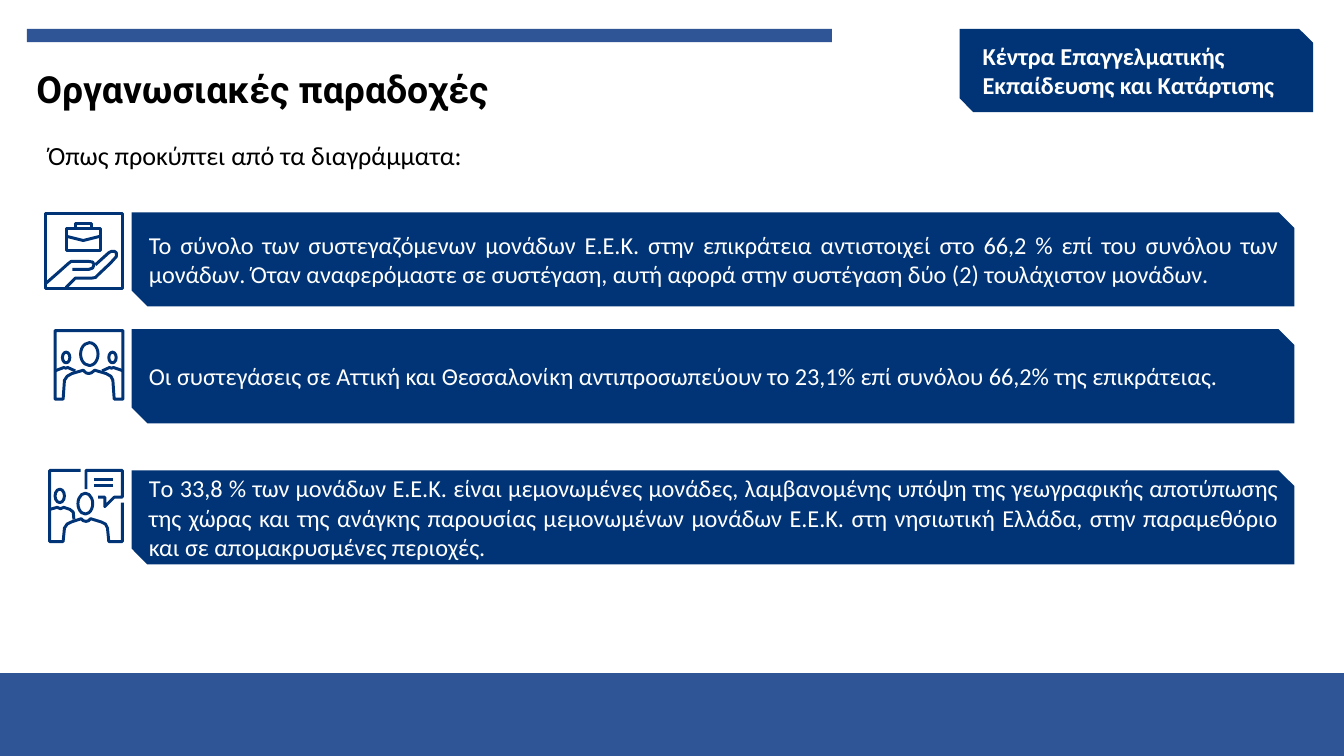
"""Builds the slide on organisational assumptions, on a grid of 100 columns."""
import pptx
import pptx.util
import pptx.dml.color
import pptx.enum.shapes
import pptx.enum.text

THEME = {
    "navy": "013476", "blue": "2F5597", "white": "FFFFFF", "black": "000000",
    "head": "Roboto", "body": "Calibri",
    "title": 20, "lead": 14, "text": 13, "line": 1.6,
}
WIDE = 10
HIGH = WIDE * 9 / 16
COL = WIDE / 100
DOT = COL / 10

TITLE = "Οργανωσιακές παραδοχές"
LEAD = "Όπως προκύπτει από τα διαγράμματα:"
BADGE = "Κέντρα Επαγγελματικής Εκπαίδευσης και Κατάρτισης"

HAND = {
    "ovals": [],
    "paths": [
        [(1, 1), (58, 1), (58, 56.5), (1, 56.5), (1, 1)],
        [(16.5, 12), (41.5, 12), (41.5, 28.5), (16.5, 28.5), (16.5, 12)],
        [(23, 12), (23, 8), (35, 8), (35, 12)],
        [(17, 18), (29, 21), (41, 18)],
        [(1, 53), (9, 46), (18, 38), (20, 36.5), (33, 36.5), (36, 37),
         (37, 39), (36, 41.5), (33, 42.5), (21, 42.5)],
        [(38, 39), (48, 30), (50, 29), (52, 29), (53.5, 30), (53.5, 33),
         (49, 38), (40, 46.5), (38, 48.5), (35, 49), (23, 49), (16, 56)],
    ],
}
CROWD = {
    "ovals": [(27, 10, 13, 17), (13.5, 17, 5.5, 8), (48, 17, 5.5, 8)],
    "paths": [
        [(14, 52), (8, 52), (8, 1), (58.5, 1), (58.5, 52), (52, 52),
         (51, 38), (49.5, 35), (46, 33), (37.5, 30.5), (35, 32.5), (33, 33),
         (31, 32.5), (29, 30.5), (20.5, 33), (17, 35), (15, 38), (14, 52)],
        [(8, 31), (10.5, 30), (14.5, 28.5), (16, 29), (17.5, 28.5), (23, 31)],
        [(43, 31), (48.5, 28.5), (50, 29), (51.5, 28.5), (56, 30), (58.5, 31)],
    ],
}
TALK = {
    "ovals": [(25, 18, 11, 15.5), (8, 15, 7, 10)],
    "paths": [
        [(27, 1), (4, 1), (4, 54), (14, 54), (15, 44), (17, 41), (20, 39.5),
         (27.5, 37), (29, 38.5), (31, 39), (33, 38.5), (34.5, 37),
         (42.5, 39.5), (45.5, 41), (47, 44), (48, 54), (58, 54), (58, 25)],
        [(4, 30), (9.5, 28.5), (12, 29.5), (14.5, 28.5), (19, 30),
         (21.5, 32), (22, 37.5)],
        [(31, 15), (31, 1), (58, 1), (58, 21), (52, 21), (45, 28),
         (45, 21), (40, 21)],
        [(37, 8), (51, 8)],
        [(37, 12), (51, 12)],
    ],
}
ROWS = [
    (15.8, 15.8, HAND, "Το σύνολο των συστεγαζόμενων μονάδων Ε.Ε.Κ. στην "
     "επικράτεια αντιστοιχεί στο 66,2 % επί του συνόλου των μονάδων. Όταν "
     "αναφερόμαστε σε συστέγαση, αυτή αφορά στην συστέγαση δύο (2) "
     "τουλάχιστον μονάδων."),
    (24.5, 24.5, CROWD, "Οι συστεγάσεις σε Αττική και Θεσσαλονίκη "
     "αντιπροσωπεύουν το 23,1% επί συνόλου 66,2% της επικράτειας."),
    (35, 34.9, TALK, "Τo 33,8 % των μονάδων Ε.Ε.Κ. είναι μεμονωμένες μονάδες, "
     "λαμβανομένης υπόψη της γεωγραφικής αποτύπωσης της χώρας και της ανάγκης "
     "παρουσίας μεμονωμένων μονάδων Ε.Ε.Κ. στη νησιωτική Ελλάδα, στην "
     "παραμεθόριο και σε απομακρυσμένες περιοχές."),
]

KIND = pptx.enum.shapes.MSO_SHAPE
ALIGN = pptx.enum.text.PP_ALIGN
MID = pptx.enum.text.MSO_ANCHOR.MIDDLE
TOP = pptx.enum.text.MSO_ANCHOR.TOP


def tone(name):
    return pptx.dml.color.RGBColor.from_string(THEME[name])


def grid(box):
    return [pptx.util.Inches(n * COL) for n in box]


def block(deck, kind, box, fill):
    shape = deck.add_shape(kind, *grid(box))
    shape.shadow.inherit = False
    shape.fill.solid()
    shape.fill.fore_color.rgb = tone(fill)
    shape.line.fill.background()
    return shape


def write(shape, text, size, ink, pad, face="body", bold=False,
          align=ALIGN.LEFT, anchor=TOP, space=1.0):
    frame = shape.text_frame
    frame.word_wrap = True
    frame.vertical_anchor = anchor
    side, edge = [pptx.util.Inches(n) for n in pad]
    frame.margin_left = frame.margin_right = side
    frame.margin_top = frame.margin_bottom = edge
    para = frame.paragraphs[0]
    para.alignment = align
    para.line_spacing = space
    run = para.add_run()
    run.text = text
    run.font.name = THEME[face]
    run.font.size = pptx.util.Pt(THEME[size])
    run.font.bold = bold
    run.font.color.rgb = tone(ink)


def stroke(shape):
    shape.shadow.inherit = False
    shape.fill.background()
    shape.line.color.rgb = tone("navy")
    shape.line.width = pptx.util.Pt(THEME["line"])


def icon(deck, left, top, art):
    def spot(x, y):
        return (round((left * COL + x * DOT) * 1000),
                round((top * COL + y * DOT) * 1000))

    for points in art["paths"]:
        first, *rest = [spot(*point) for point in points]
        pen = deck.build_freeform(*first, scale=914.4)
        pen.add_line_segments(rest, close=points[0] == points[-1])
        stroke(pen.convert_to_shape())
    for x, y, w, h in art["ovals"]:
        box = left + x / 10, top + y / 10, w / 10, h / 10
        stroke(deck.add_shape(KIND.OVAL, *grid(box)))


def main():
    show = pptx.Presentation()
    show.slide_width = pptx.util.Inches(WIDE)
    show.slide_height = pptx.util.Inches(HIGH)
    deck = show.slides.add_slide(show.slide_layouts[6]).shapes

    foot = 50.1
    block(deck, KIND.RECTANGLE, (0, foot, 100, HIGH / COL - foot), "blue")
    title = deck.add_textbox(*grid((2, 4, 37.2, 4.5)))
    write(title, TITLE, "title", "black", (0.07, 0.04), "head", True, space=1.15)
    block(deck, KIND.RECTANGLE, (2, 2.15, 59.9, 1), "blue")
    badge = block(deck, KIND.SNIP_2_DIAG_RECTANGLE, (71.4, 2.15, 26.3, 6.2), "navy")
    write(badge, BADGE, "text", "white", (0.12, 0.02), bold=True, anchor=MID)
    lead = deck.add_textbox(*grid((2.6, 9.4, 49.5, 4.4)))
    write(lead, LEAD, "lead", "black", (0.1, 0.1))

    for top, rise, art, text in ROWS:
        bar = block(deck, KIND.SNIP_2_DIAG_RECTANGLE, (9.8, top, 86.5, 7), "navy")
        write(bar, text, "text", "white", (0.07, 0.03), align=ALIGN.JUSTIFY, anchor=MID)
        icon(deck, 3.3, rise, art)

    show.save("out.pptx")


if __name__ == "__main__":
    main()
